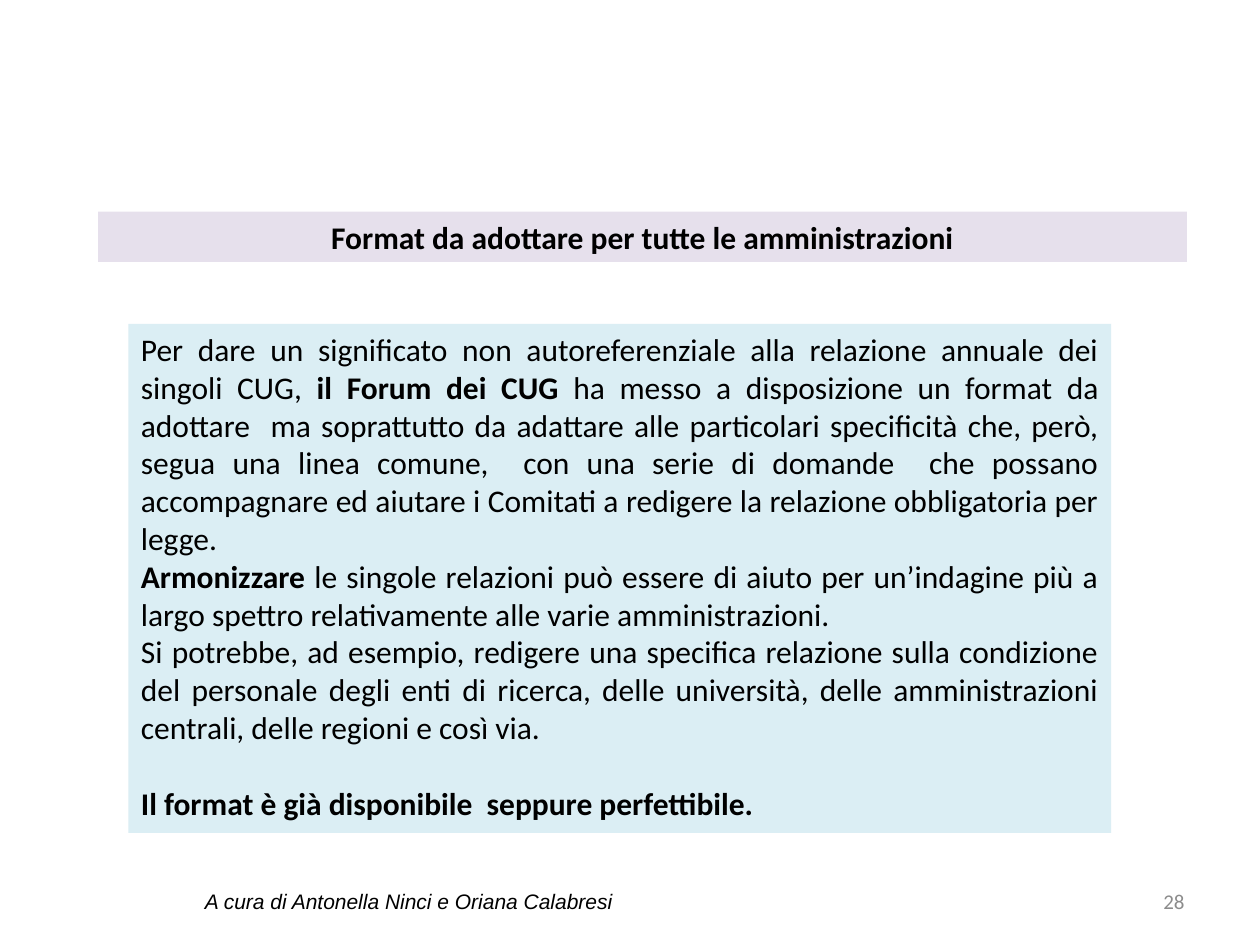
from pptx import Presentation
from pptx.dml.color import RGBColor
from pptx.enum.text import MSO_ANCHOR as Anchor, PP_ALIGN as Align
from pptx.util import Inches, Pt

BLACK = RGBColor(0x00, 0x00, 0x00)
GREY = RGBColor(0x8C, 0x8C, 0x8C)
LILAC = RGBColor(0xE6, 0xE0, 0xEC)
PALE_BLUE = RGBColor(0xDB, 0xEE, 0xF4)

HEADING = "Format da adottare per tutte le amministrazioni"
CREDIT = "A cura di Antonella Ninci e Oriana Calabresi"
PAGE_NUMBER = "28"

# Each paragraph is a list of (text, bold) runs.
BODY = [
    [("Per dare un significato non autoreferenziale alla relazione annuale dei "
      "singoli CUG, ", False),
     ("il Forum dei CUG ", True),
     ("ha messo a disposizione un format da adottare  ma soprattutto da adattare "
      "alle particolari specificità che, però, segua una linea comune,  con una "
      "serie di domande  che possano accompagnare ed aiutare i Comitati a redigere "
      "la relazione obbligatoria per legge.", False)],
    [("Armonizzare", True),
     (" le singole relazioni può essere di aiuto per un’indagine più a largo "
      "spettro relativamente alle varie amministrazioni.", False)],
    [("Si potrebbe, ad esempio, redigere una specifica relazione sulla condizione "
      "del personale degli enti di ricerca, delle università, delle "
      "amministrazioni centrali, delle regioni e così via.", False)],
    [("Il format è già disponibile  seppure perfettibile.", True)],
]


def add_box(slide, box, fill=None, anchor=Anchor.TOP):
    """Add a wrapping text box at box (left, top, width, height in inches)."""
    panel = slide.shapes.add_textbox(*map(Inches, box))
    if fill is not None:
        panel.fill.solid()
        panel.fill.fore_color.rgb = fill
    frame = panel.text_frame
    frame.word_wrap = True
    frame.vertical_anchor = anchor
    return frame


def style_run(run, size, color=BLACK, name="Calibri", bold=False, italic=False):
    font = run.font
    font.size, font.name = Pt(size), name
    font.bold, font.italic = bold, italic
    font.color.rgb = color


def add_line(frame, text, align, **style):
    """Fill the frame with one paragraph in a single style."""
    frame.text = text
    line = frame.paragraphs[0]
    line.alignment = align
    style_run(line.runs[0], **style)


def add_heading(slide, box):
    add_line(add_box(slide, box, LILAC), HEADING, Align.CENTER, size=18, bold=True)


def add_body(slide, box):
    frame = add_box(slide, box, PALE_BLUE)
    for index, parts in enumerate(BODY):
        paragraph = frame.add_paragraph() if index else frame.paragraphs[0]
        paragraph.alignment = Align.JUSTIFY
        for text, bold in parts:
            run = paragraph.add_run()
            run.text = text
            style_run(run, size=18, bold=bold)
    frame.paragraphs[-1].space_before = Pt(22)


def add_footer(slide, credit_box, number_box):
    add_line(add_box(slide, credit_box, anchor=Anchor.MIDDLE), CREDIT,
             Align.CENTER, size=12, name="Arial", italic=True)
    add_line(add_box(slide, number_box, anchor=Anchor.MIDDLE), PAGE_NUMBER,
             Align.RIGHT, size=12, color=GREY)


def main():
    deck = Presentation()
    deck.slide_width, deck.slide_height = Inches(10), Inches(7.5)
    slide = deck.slides.add_slide(deck.slide_layouts[6])
    add_heading(slide, (0.78, 1.68, 8.64, 0.4))
    add_body(slide, (1.02, 2.57, 7.8, 4.04))
    add_footer(slide, (1.02, 6.95, 4.45, 0.4), (7.17, 6.95, 2.33, 0.4))
    deck.save("out.pptx")


if __name__ == "__main__":
    main()
